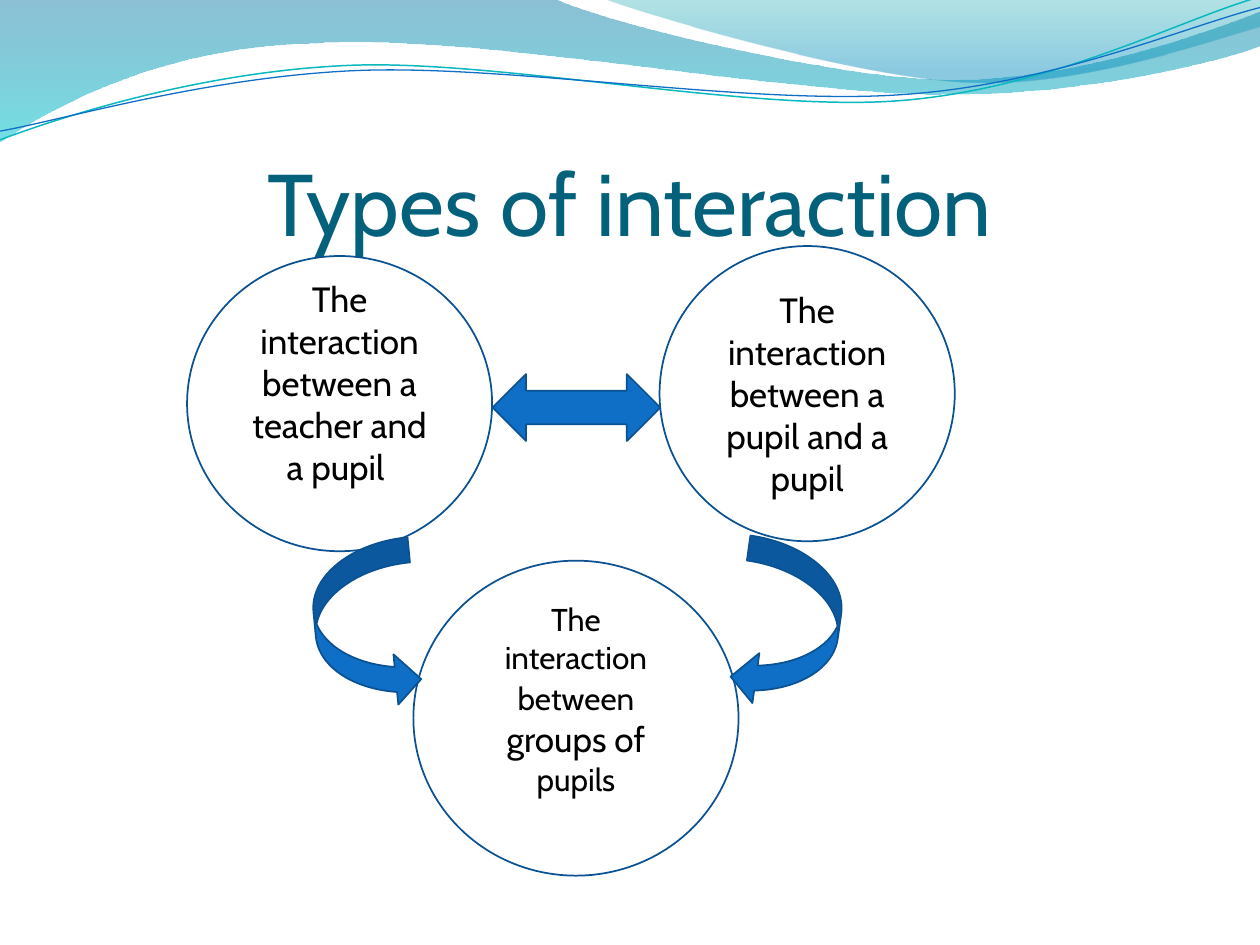
from lxml import etree
from pptx import Presentation
from pptx.dml.color import RGBColor
from pptx.enum.shapes import MSO_SHAPE
from pptx.enum.text import MSO_ANCHOR, PP_ALIGN
from pptx.oxml.ns import qn
from pptx.util import Pt

OVAL = MSO_SHAPE.OVAL
BOTH = MSO_SHAPE.LEFT_RIGHT_ARROW
LEFT = MSO_SHAPE.CURVED_LEFT_ARROW
RIGHT = MSO_SHAPE.CURVED_RIGHT_ARROW
CENTER = PP_ALIGN.CENTER
MIDDLE, BOTTOM = MSO_ANCHOR.MIDDLE, MSO_ANCHOR.BOTTOM

FONT = "Cabin"
COLORS = {
    "title": "04617B", "text": "000000", "arrow": "0F6FC6", "edge": "0B5292",
    "teal": "0AB8BF", "deep": "0074A1", "aqua": "00C6CF",
    "green": "00A1A9", "sky": "008BBF",
}

# A pair is a straight step; six numbers are a Bezier step.
BAND = [
    (0, 0), (316.8, -0.7),
    (342.7, 12.2, 478.1, 45.4, 545.8, 45.4),
    (614.2, 45.4, 689.8, 18.7, 720, 6.5), (720.7, 25.9),
    (707.8, 31.7, 626.4, 54.7, 537.1, 54),
    (447.8, 54, 275, 20.2, 185, 24.5),
    (92.9, 25.9, 33.1, 59.8, -0.7, 81.4),
]
CREST = [
    (344.9, -0.7),
    (366.5, 7.9, 491, 44.6, 553.7, 46.8),
    (616.3, 49.7, 691.9, 23, 720, 15.1), (720, 0),
]
UPPER = [
    (0, 79.9),
    (34.6, 67, 113.8, 41, 199.4, 37.4),
    (284.4, 33.8, 427, 64.1, 513.4, 57.6),
    (599.8, 51.1, 675.4, 10.8, 718.6, -1.4),
]
LOWER = [
    (0, 74.9),
    (33.8, 69.1, 118.1, 43.9, 203.8, 40.3),
    (290.2, 36.7, 429.8, 60.5, 516.2, 54),
    (601.9, 48.2, 677.5, 15.1, 720, 4.3),
]


def color(name):
    return RGBColor.from_string(COLORS[name])


def add_path(slide, steps, close):
    """Draw the steps as lines, then join each Bezier's three lines in one curve."""
    spots = [(Pt(step[i]), Pt(step[i + 1]))
             for step in steps for i in range(0, len(step), 2)]
    pen = slide.shapes.build_freeform(*spots[0], scale=1.0)
    pen.add_line_segments(spots[1:], close=close)
    shape = pen.convert_to_shape()
    shape.shadow.inherit = False
    lines = iter(list(shape._element.spPr.iter(qn("a:lnTo"))))
    for step in steps[1:]:
        line = next(lines)
        if len(step) == 6:
            curve = etree.Element(qn("a:cubicBezTo"))
            line.addprevious(curve)
            for part in (line, next(lines), next(lines)):
                curve.append(part[0])
                part.getparent().remove(part)
    return shape


def add_wave(slide, steps, stops):
    """Draw a closed wave; each stop is place, colour name, opacity in percent."""
    shape = add_path(slide, steps, True)
    shape.line.fill.background()
    shape.fill.gradient()
    shape.fill.gradient_angle = 270
    for stop, (place, name, _) in zip(shape.fill.gradient_stops, stops):
        stop.position = place
        stop.color.rgb = color(name)
    tags = shape._element.spPr.iter(qn("a:srgbClr"))
    for tag, (_, _, solid) in zip(tags, stops):
        etree.SubElement(tag, qn("a:alpha")).set("val", str(solid * 1000))


def add_curve(slide, steps, name, width):
    shape = add_path(slide, steps, False)
    shape.fill.background()
    shape.line.color.rgb = color(name)
    shape.line.width = Pt(width)


def add_form(slide, kind, box, fill=None, turn=0):
    shape = slide.shapes.add_shape(kind, *map(Pt, box))
    shape.shadow.inherit = False
    shape.rotation = turn
    if fill:
        shape.fill.solid()
        shape.fill.fore_color.rgb = color(fill)
    else:
        shape.fill.background()
    shape.line.color.rgb = color("edge")
    shape.line.width = Pt(1)
    return shape


def add_text(frame, runs, name, anchor):
    """Write one centred paragraph; each run is wording and size."""
    frame.word_wrap = True
    frame.vertical_anchor = anchor
    para = frame.paragraphs[0]
    para.alignment = CENTER
    para.font.name = FONT
    para.font.color.rgb = color(name)
    for words, size in runs:
        run = para.add_run()
        run.text = words
        run.font.size = Pt(size)


def add_circle(slide, box, runs, lift=0, side=7.2):
    """Draw a labelled circle; lift is extra room under the text."""
    frame = add_form(slide, OVAL, box).text_frame
    frame.margin_left = frame.margin_right = Pt(side)
    frame.margin_bottom = Pt(3.6 + lift)
    add_text(frame, runs, "text", MIDDLE)


def add_title(slide, words):
    frame = slide.shapes.add_textbox(Pt(36), Pt(55.4), Pt(648), Pt(90)).text_frame
    frame.margin_left = frame.margin_right = frame.margin_bottom = 0
    add_text(frame, [(words, 50)], "title", BOTTOM)


def main():
    deck = Presentation()
    deck.slide_width, deck.slide_height = Pt(720), Pt(540)
    slide = deck.slides.add_slide(deck.slide_layouts[6])

    add_wave(slide, BAND, [(0, "deep", 45), (1, "aqua", 55)])
    add_wave(slide, CREST, [(0, "green", 30), (0.8, "sky", 45)])
    add_curve(slide, UPPER, "teal", 0.85)
    add_curve(slide, LOWER, "arrow", 0.75)

    add_title(slide, "Types of interaction")
    add_circle(slide, (106.9, 146.3, 174.3, 168.7),
               [("The interaction between a teacher and a pupil ", 20)], 24)
    add_circle(slide, (376.9, 140.6, 168.7, 168.7),
               [("The interaction between a pupil and a pupil", 20)])
    add_form(slide, BOTH, (281.5, 213.8, 95.8, 38.2), "arrow")
    add_circle(slide, (236.2, 320.4, 185.8, 180),
               [("The interaction between", 18), (" groups of ", 20),
                ("pupils", 18)], 22, 11)
    add_form(slide, LEFT, (421.9, 309.6, 57.6, 95.8), "arrow", 8)
    add_form(slide, RIGHT, (180, 309.6, 57.6, 95.8), "arrow", 354.5)

    deck.save("out.pptx")


if __name__ == "__main__":
    main()
